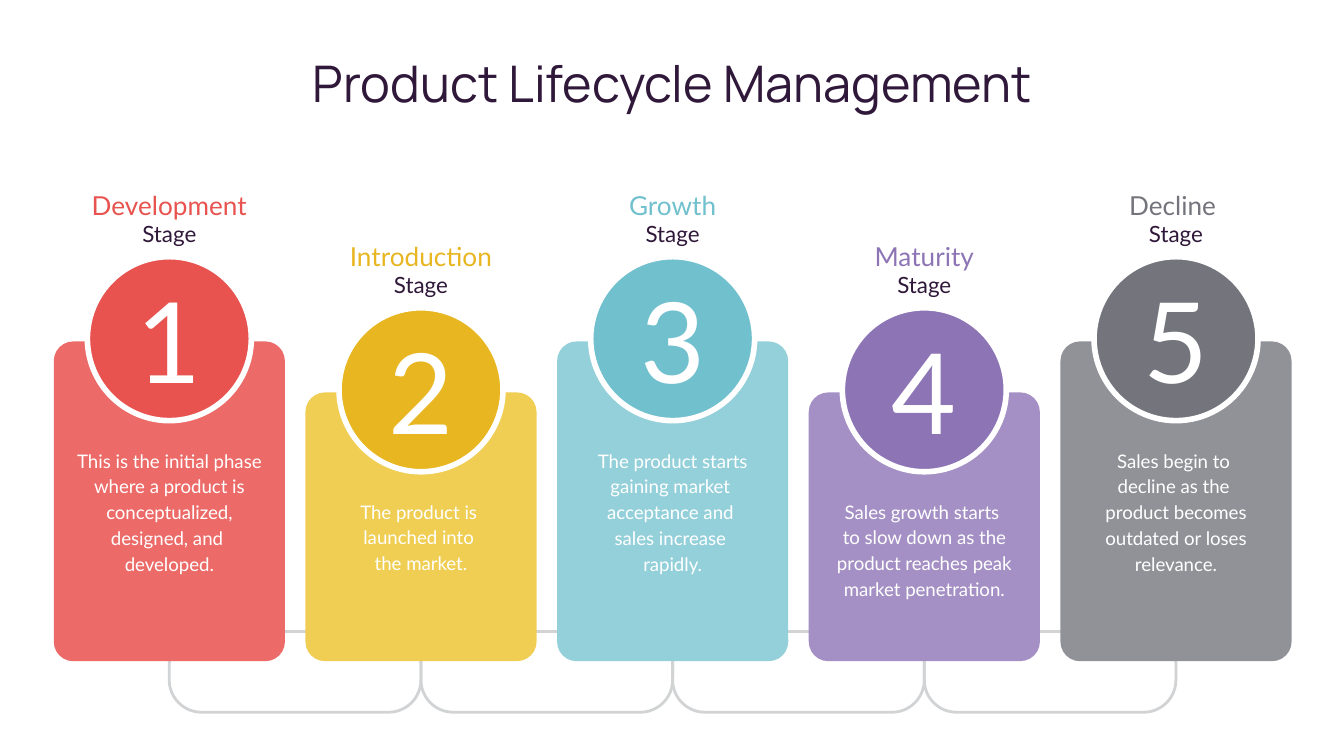
from pptx import Presentation
from pptx.dml.color import RGBColor
from pptx.enum.shapes import MSO_SHAPE
from pptx.enum.text import MSO_AUTO_SIZE, PP_ALIGN
from pptx.util import Inches, Pt

CARD = MSO_SHAPE.ROUNDED_RECTANGLE
CIRCLE = MSO_SHAPE.OVAL
CENTER = PP_ALIGN.CENTER
FIT_TEXT = MSO_AUTO_SIZE.SHAPE_TO_FIT_TEXT

COLORS = {
    "ink": "2F1839", "white": "FFFFFF", "track": "D1D3D4",
    "red": "E8534F", "red card": "EC6A67",
    "yellow": "E8B621", "yellow card": "F0CE53",
    "teal": "71C0CE", "teal card": "94D0DA",
    "purple": "8D75B5", "purple card": "A490C4",
    "gray": "73747C", "gray card": "919298",
}

# Name, color, description paragraphs, number of lines when wrapped
STAGES = [
    ("Development", "red",
     ["This is the initial phase where a product is conceptualized, designed, and ",
      "developed."], 5),
    ("Introduction", "yellow",
     ["The product is ", "launched into ", "the market."], 3),
    ("Growth", "teal",
     ["The product starts gaining market ", "acceptance and ",
      "sales increase ", "rapidly."], 5),
    ("Maturity", "purple",
     ["Sales growth starts ",
      "to slow down as the product reaches peak market penetration."], 4),
    ("Decline ", "gray",
     ["Sales begin to ", "decline as the ",
      "product becomes outdated or loses relevance."], 5),
]

SLIDE_WIDTH = 10
FIRST_CENTER = 1.26
PITCH = 7.49 / 4     # distance from first to last stage, in four steps
CARD_WIDTH = 1.72
CARD_BOTTOM = 4.92
CIRCLE_SIZE = 1.22
DROP = 0.38          # every second stage sits lower
LINE_HEIGHT = 0.19   # one line of the description


def rgb(name):
    return RGBColor.from_string(COLORS[name])


def add_figure(page, kind, center, top, width, height,
               fill=None, line=None, weight=0, corner=None):
    """Add a preset shape centered on a vertical axis."""
    figure = page.shapes.add_shape(kind, Inches(center - width / 2), Inches(top),
                                   Inches(width), Inches(height))
    figure.shadow.inherit = False
    if corner is not None:
        figure.adjustments[0] = corner
    if fill:
        figure.fill.solid()
        figure.fill.fore_color.rgb = rgb(fill)
    else:
        figure.fill.background()
    if line:
        figure.line.color.rgb = rgb(line)
        figure.line.width = Pt(weight)
    else:
        figure.line.fill.background()


def add_text(page, paragraphs, center, top, width, height,
             size, color, font="Lato", spacing=None):
    """Add centered text without margins."""
    box = page.shapes.add_textbox(Inches(center - width / 2), Inches(top),
                                  Inches(width), Inches(height))
    frame = box.text_frame
    frame_format = {"word_wrap": True, "auto_size": FIT_TEXT,
                    "margin_left": 0, "margin_right": 0,
                    "margin_top": 0, "margin_bottom": 0}
    for name, value in frame_format.items():
        setattr(frame, name, value)
    for index, text in enumerate(paragraphs):
        para = frame.add_paragraph() if index else frame.paragraphs[0]
        para.alignment = CENTER
        if spacing:
            para.line_spacing = spacing
        span = para.add_run()
        span.text = text
        for name, value in {"name": font, "size": Pt(size)}.items():
            setattr(span.font, name, value)
        span.font.color.rgb = rgb(color)


def add_stage(page, index, name, color, description, lines):
    center = FIRST_CENTER + index * PITCH
    shift = DROP * (index % 2)
    card_top = 2.54 + shift

    # Card and number circle
    add_figure(page, CARD, center, card_top, CARD_WIDTH, CARD_BOTTOM - card_top,
               fill=f"{color} card", corner=0.085)
    add_figure(page, CIRCLE, center, 1.91 + shift, CIRCLE_SIZE, CIRCLE_SIZE,
               fill=color, line="white", weight=3)

    # Heading, number and description
    add_text(page, [name], center, 1.41 + shift, 1.54, 0.24, 14, color)
    add_text(page, ["Stage"], center, 1.64 + shift, 0.87, 0.2, 12, "ink")
    add_text(page, [str(index + 1)], center, 2.02 + shift, CIRCLE_SIZE, 1.01,
             60, "white")
    add_text(page, description, center, 3.32 + shift, 1.48, lines * LINE_HEIGHT,
             10, "white", spacing=1.15)


def main():
    deck = Presentation()
    deck.slide_width = Inches(SLIDE_WIDTH)
    deck.slide_height = Inches(SLIDE_WIDTH * 9 / 16)
    page = deck.slides.add_slide(deck.slide_layouts[6])

    # Title
    add_text(page, ["Product Lifecycle Management"], SLIDE_WIDTH / 2, 0.39,
             9.21, 0.45, 27, "ink", font="Manrope")

    # Loops that link neighboring cards
    for index in range(len(STAGES) - 1):
        add_figure(page, CARD, FIRST_CENTER + (index + 0.5) * PITCH, 4.7, PITCH,
                   0.6, line="track", weight=1.5, corner=0.4)

    # Stages
    for index, stage in enumerate(STAGES):
        add_stage(page, index, *stage)

    deck.save("out.pptx")


if __name__ == "__main__":
    main()
